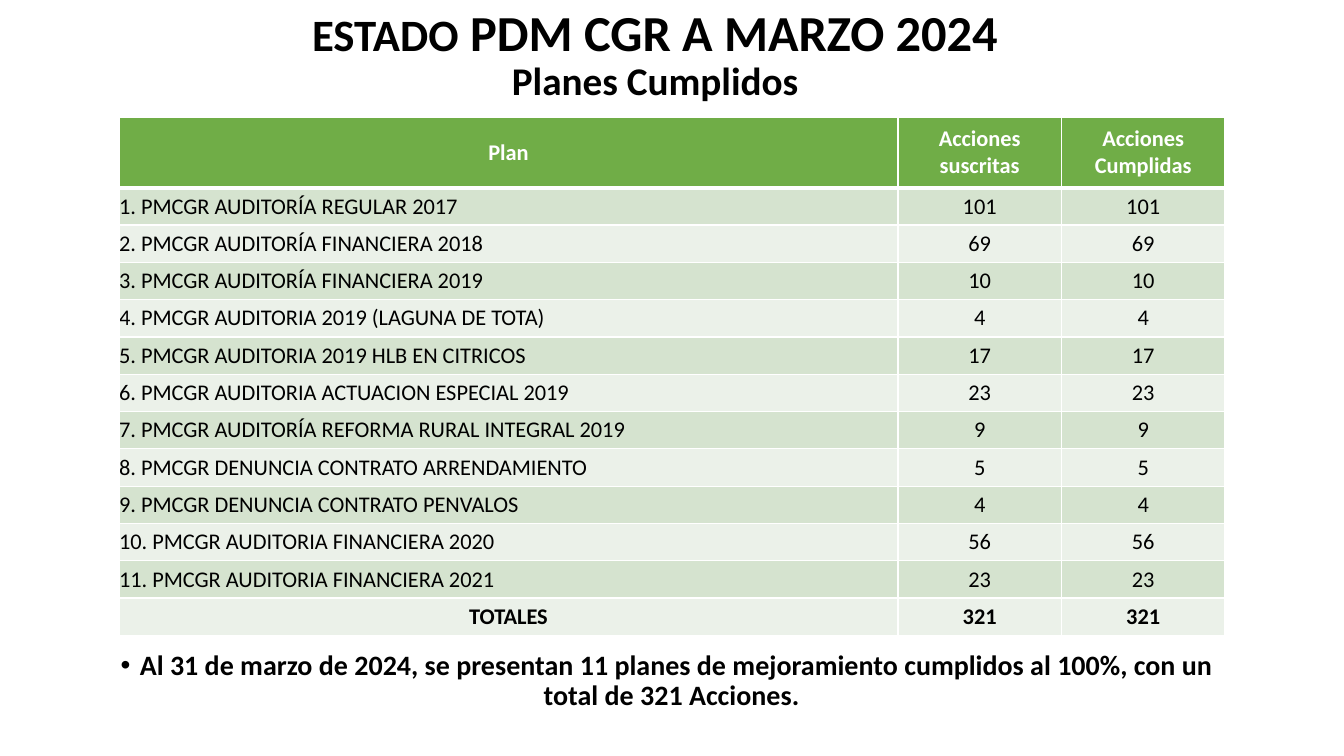
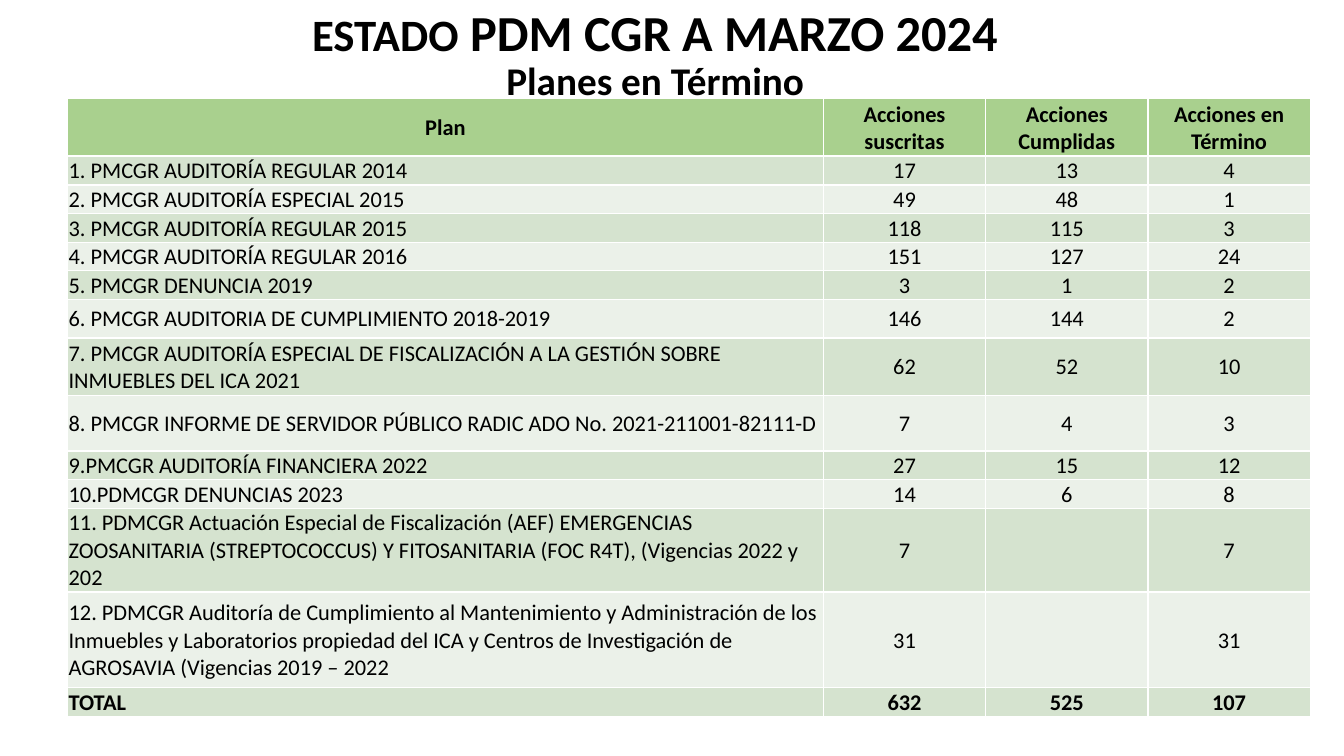
from lxml.etree import SubElement
from pptx import Presentation
from pptx.dml.color import RGBColor
from pptx.enum.text import MSO_ANCHOR, MSO_AUTO_SIZE, PP_ALIGN
from pptx.oxml.ns import qn
from pptx.util import Cm, Pt

BLACK = RGBColor(0x00, 0x00, 0x00)
WHITE = RGBColor(0xFF, 0xFF, 0xFF)
GREEN = RGBColor(0x70, 0xAD, 0x47)
LIGHT_GREEN = RGBColor(0xA9, 0xD0, 0x8E)
BANDS = (RGBColor(0xD5, 0xE3, 0xCF), RGBColor(0xEB, 0xF1, 0xE9))

COMPLETED_PLANS = [
    ("1. PMCGR AUDITORÍA REGULAR 2017", 101),
    ("2. PMCGR AUDITORÍA FINANCIERA 2018", 69),
    ("3. PMCGR AUDITORÍA FINANCIERA 2019", 10),
    ("4. PMCGR AUDITORIA 2019 (LAGUNA DE TOTA)", 4),
    ("5. PMCGR AUDITORIA 2019 HLB EN CITRICOS", 17),
    ("6. PMCGR AUDITORIA ACTUACION ESPECIAL 2019", 23),
    ("7. PMCGR AUDITORÍA REFORMA RURAL INTEGRAL 2019", 9),
    ("8. PMCGR DENUNCIA CONTRATO ARRENDAMIENTO", 5),
    ("9. PMCGR DENUNCIA CONTRATO PENVALOS", 4),
    ("10. PMCGR AUDITORIA FINANCIERA 2020", 56),
    ("11. PMCGR AUDITORIA FINANCIERA 2021", 23),
    ("TOTALES", 321),
]

ONGOING_PLANS = [
    ("1. PMCGR AUDITORÍA REGULAR 2014", 17, 13, 4),
    ("2. PMCGR AUDITORÍA ESPECIAL 2015", 49, 48, 1),
    ("3. PMCGR AUDITORÍA REGULAR 2015", 118, 115, 3),
    ("4. PMCGR AUDITORÍA REGULAR 2016", 151, 127, 24),
    ("5. PMCGR DENUNCIA 2019", 3, 1, 2),
    ("6. PMCGR AUDITORIA DE CUMPLIMIENTO 2018-2019", 146, 144, 2),
    ("7. PMCGR AUDITORÍA ESPECIAL DE FISCALIZACIÓN A LA GESTIÓN SOBRE "
     "INMUEBLES DEL ICA 2021", 62, 52, 10),
    ("8. PMCGR INFORME DE SERVIDOR PÚBLICO RADIC ADO No. 2021-211001-82111-D",
     7, 4, 3),
    ("9.PMCGR AUDITORÍA FINANCIERA 2022", 27, 15, 12),
    ("10.PDMCGR DENUNCIAS 2023", 14, 6, 8),
    ("11. PDMCGR Actuación Especial de Fiscalización (AEF) EMERGENCIAS "
     "ZOOSANITARIA (STREPTOCOCCUS) Y FITOSANITARIA (FOC R4T), "
     "(Vigencias 2022 y 202", 7, "", 7),
    ("12. PDMCGR Auditoría de Cumplimiento al Mantenimiento y Administración "
     "de los Inmuebles y Laboratorios propiedad del ICA y Centros de "
     "Investigación de AGROSAVIA (Vigencias 2019 – 2022", 31, "", 31),
    ("TOTAL", 632, 525, 107),
]


class PlanDeck:
    """Holds the shared style and the slide being built."""

    font_name = "Calibri"

    def __init__(self):
        """Start an empty widescreen presentation."""
        self.presentation = Presentation()
        self.presentation.slide_width = Cm(33.87)
        self.presentation.slide_height = Cm(19.05)
        self.slide = None

    def style(self, paragraph, size=None, color=BLACK, bold=True,
              alignment=PP_ALIGN.CENTER):
        """Apply the deck font to a whole paragraph."""
        paragraph.alignment = alignment
        font = paragraph.font
        font.name = self.font_name
        font.bold = bold
        font.color.rgb = color
        if size:
            font.size = Pt(size)

    def add_slide(self, subtitle):
        """Add a slide with the common heading and its own subtitle."""
        self.slide = self.presentation.slides.add_slide(
            self.presentation.slide_layouts[5])
        title = self.slide.shapes.title
        title.left, title.top = Cm(-0.56), Cm(0.33)
        title.width, title.height = Cm(34.14), Cm(2.16)
        frame = title.text_frame
        frame.auto_size = MSO_AUTO_SIZE.NONE
        frame.vertical_anchor = MSO_ANCHOR.MIDDLE
        paragraph = frame.paragraphs[0]
        paragraph.line_spacing = 0.9
        self.style(paragraph)
        for text, size in (("ESTADO", 32), (" PDM CGR A MARZO 2024", 36)):
            self.add_run(paragraph, text, size)
        paragraph.add_line_break()
        self.add_run(paragraph, subtitle, 28)

    def add_run(self, paragraph, text, size):
        """Add a run with its own size."""
        run = paragraph.add_run()
        run.text = text
        run.font.size = Pt(size)

    def add_border(self, cell, side, width):
        """Draw one white cell border; call before filling the cell."""
        line = SubElement(cell._tc.get_or_add_tcPr(), qn(f"a:ln{side}"),
                          w=str(Pt(width)))
        fill = SubElement(line, qn("a:solidFill"))
        SubElement(fill, qn("a:srgbClr"), val=str(WHITE))

    def format_cell(self, cell, text, fill, inset, borders, **text_style):
        """Write and format one table cell."""
        for side, width in zip("LRTB", borders):
            self.add_border(cell, side, width)
        cell.fill.solid()
        cell.fill.fore_color.rgb = fill
        cell.vertical_anchor = MSO_ANCHOR.MIDDLE
        cell.margin_left = cell.margin_right = cell.margin_top = Cm(inset)
        cell.margin_bottom = 0
        cell.text = str(text)
        self.style(cell.text_frame.paragraphs[0], 16, **text_style)

    def add_plan_table(self, left, top, columns, heights, headers, plans,
                       header_fill, header_color, header_line, inset=0,
                       total_alignment=PP_ALIGN.CENTER):
        """Add a banded table with a header row and a bold total row."""
        rows = [headers, *plans]
        table = self.slide.shapes.add_table(
            len(rows), len(columns), Cm(left), Cm(top),
            Cm(sum(columns)), Cm(sum(heights))).table
        table.horz_banding = False
        for column, width in zip(table.columns, columns):
            column.width = Cm(width)
        for row, height in zip(table.rows, heights):
            row.height = Cm(height)
        for row_index, values in enumerate(rows):
            is_header = row_index == 0
            is_total = row_index == len(plans)
            fill = header_fill if is_header else BANDS[(row_index - 1) % 2]
            color = header_color if is_header else BLACK
            borders = (1, 1, header_line if row_index == 1 else 1,
                       header_line if is_header else 1)
            for column_index, value in enumerate(values):
                alignment = PP_ALIGN.CENTER
                if column_index == 0 and not is_header:
                    alignment = total_alignment if is_total else PP_ALIGN.LEFT
                self.format_cell(
                    table.cell(row_index, column_index), value, fill, inset,
                    borders, color=color, bold=is_header or is_total,
                    alignment=alignment)

    def add_bullet_note(self, text, left, top, width, height):
        """Add a centred bold note with a bullet."""
        shape = self.slide.shapes.add_textbox(
            Cm(left), Cm(top), Cm(width), Cm(height))
        frame = shape.text_frame
        frame.word_wrap = True
        frame.vertical_anchor = MSO_ANCHOR.MIDDLE
        paragraph = frame.paragraphs[0]
        paragraph.text = text
        paragraph.line_spacing = 0.9
        paragraph.space_after = Pt(6)
        properties = paragraph._p.get_or_add_pPr()
        properties.set("marL", "0")
        properties.set("indent", str(Cm(-0.64)))
        SubElement(properties, qn("a:buFont"), typeface="Arial")
        SubElement(properties, qn("a:buChar"), char="•")
        self.style(paragraph, 20)


def main():
    """Build and save both slides."""
    deck = PlanDeck()
    headers = ("Plan", "Acciones suscritas", "Acciones Cumplidas")

    deck.add_slide("Planes Cumplidos")
    deck.add_bullet_note(
        "Al 31 de marzo de 2024, se presentan 11 planes de mejoramiento "
        "cumplidos al 100%, con un total de 321 Acciones.",
        2.79, 16.1, 28.27, 2.16)
    deck.add_plan_table(
        3, 2.95, [19.63] + [4.12] * 2, [1.78] + [0.94] * 12, headers,
        [(plan, actions, actions) for plan, actions in COMPLETED_PLANS],
        GREEN, WHITE, 3)

    deck.add_slide("Planes en Término")
    deck.add_plan_table(
        1.7, 2.49, [19.05] + [4.09] * 3,
        [1.45] + [0.71] * 5 + [0.97, 1.45, 1.4, 0.71, 0.71, 2.11, 2.41, 0.71],
        (*headers, "Acciones en Término"), ONGOING_PLANS,
        LIGHT_GREEN, BLACK, 1.5, inset=0.03, total_alignment=PP_ALIGN.LEFT)

    deck.presentation.save("out.pptx")


if __name__ == "__main__":
    main()
